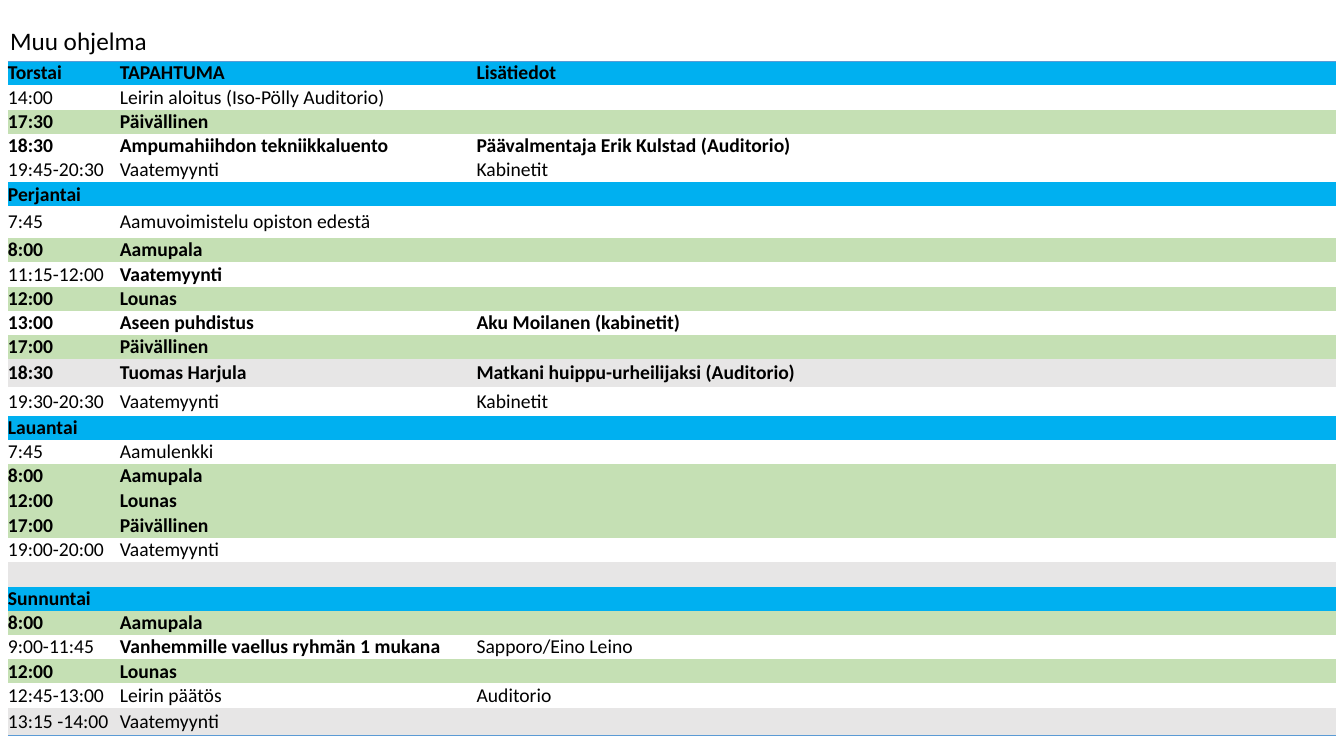
from lxml import etree
from pptx import Presentation
from pptx import util as u
from pptx.dml.color import RGBColor
from pptx.enum import text
from pptx.oxml.ns import qn

COLORS = {"ink": "000000", "day": "00B0F0", "meal": "C5E0B4", "grey": "E7E6E6", "rule": "5B9BD5"}
PLAIN_TABLE = "{2D5ABB26-0587-4C30-8999-92F81FD0307C}"
ALL_BOLD, EVENT_BOLD, NO_BOLD = (0, 1, 2), (1,), ()

# Row kind: fill colour and bold columns
ROW_STYLES = {
    "day": ("day", ALL_BOLD),
    "meal": ("meal", ALL_BOLD),
    "talk": (None, ALL_BOLD),
    "guest": ("grey", ALL_BOLD),
    "event": (None, EVENT_BOLD),
    "plain": (None, NO_BOLD),
    "shaded": ("grey", NO_BOLD),
}
COLUMN_WIDTHS = (2.82, 8.99, 21.67)
ROW_HEIGHT = 0.61
TALL_ROWS = {6: 0.8, 12: 0.71, 13: 0.71, 17: 0.65, 26: 0.71}
PROGRAMME = [
    ("day", "Torstai", "TAPAHTUMA", "Lisätiedot"),
    ("plain", "14:00", "Leirin aloitus (Iso-Pölly Auditorio)", ""),
    ("meal", "17:30", "Päivällinen", ""),
    ("talk", "18:30", "Ampumahiihdon tekniikkaluento", "Päävalmentaja Erik Kulstad (Auditorio)"),
    ("plain", "19:45-20:30", "Vaatemyynti", "Kabinetit"),
    ("day", "Perjantai", "", ""),
    ("plain", "7:45", "Aamuvoimistelu opiston edestä", ""),
    ("meal", "8:00", "Aamupala", ""),
    ("event", "11:15-12:00", "Vaatemyynti", ""),
    ("meal", "12:00", "Lounas", ""),
    ("talk", "13:00", "Aseen puhdistus", "Aku Moilanen (kabinetit)"),
    ("meal", "17:00", "Päivällinen", ""),
    ("guest", "18:30", "Tuomas Harjula", "Matkani huippu-urheilijaksi (Auditorio)"),
    ("plain", "19:30-20:30", "Vaatemyynti", "Kabinetit"),
    ("day", "Lauantai", "", ""),
    ("plain", "7:45", "Aamulenkki", ""),
    ("meal", "8:00", "Aamupala", ""),
    ("meal", "12:00", "Lounas", ""),
    ("meal", "17:00", "Päivällinen", ""),
    ("plain", "19:00-20:00", "Vaatemyynti", ""),
    ("shaded", "", "", ""),
    ("day", "Sunnuntai", "", ""),
    ("meal", "8:00", "Aamupala", ""),
    ("event", "9:00-11:45", "Vanhemmille vaellus ryhmän 1 mukana", "Sapporo/Eino Leino"),
    ("meal", "12:00", "Lounas", ""),
    ("plain", "12:45-13:00", "Leirin päätös", "Auditorio"),
    ("shaded", "13:15 -14:00", "Vaatemyynti", ""),
]


class ProgrammeSlide:
    font = "Calibri"
    title_size = 18
    cell_size = 14

    def __init__(self, deck):
        self.page = deck.slides.add_slide(deck.slide_layouts[5])

    def format_para(self, para, size, bold=False):
        para.alignment = text.PP_ALIGN.LEFT
        for span in para.runs:
            span.font.name = self.font
            span.font.size = u.Pt(size)
            span.font.bold = bold
            span.font.color.rgb = RGBColor.from_string(COLORS["ink"])

    def title(self, wording, left, top, width, height):
        box = self.page.shapes.title
        box.left, box.top, box.width, box.height = map(u.Cm, (left, top, width, height))
        frame = box.text_frame
        frame.text = wording
        frame.word_wrap = True
        frame.auto_size = text.MSO_AUTO_SIZE.SHAPE_TO_FIT_TEXT
        frame.vertical_anchor = text.MSO_ANCHOR.TOP
        frame.paragraphs[0].line_spacing = 1.0
        self.format_para(frame.paragraphs[0], self.title_size)

    def cell(self, cell, wording, fill, bold):
        cell.margin_left = cell.margin_right = cell.margin_top = cell.margin_bottom = 0
        cell.vertical_anchor = text.MSO_ANCHOR.MIDDLE
        if fill:
            cell.fill.solid()
            cell.fill.fore_color.rgb = RGBColor.from_string(COLORS[fill])
        else:
            cell.fill.background()
        para = cell.text_frame.paragraphs[0]
        para.text = wording
        self.format_para(para, self.cell_size, bold)
        if not wording:
            etree.SubElement(para._p, qn("a:endParaRPr"), sz=str(self.cell_size * 100))

    def border(self, cell, side):
        """Draw a thin rule on one side of a cell: "T" for top, "B" for bottom."""
        line = etree.Element(qn(f"a:ln{side}"), w=str(u.Pt(1)))
        fill = etree.SubElement(line, qn("a:solidFill"))
        etree.SubElement(fill, qn("a:srgbClr"), val=COLORS["rule"])
        cell._tc.get_or_add_tcPr().insert(0, line)

    def table(self, rows, left, top):
        heights = [TALL_ROWS.get(index, ROW_HEIGHT) for index in range(len(rows))]
        frame = self.page.shapes.add_table(
            len(rows), len(COLUMN_WIDTHS), u.Cm(left), u.Cm(top),
            u.Cm(sum(COLUMN_WIDTHS)), u.Cm(sum(heights)))
        table = frame.table
        table.first_row = table.horz_banding = False
        table._tbl.tblPr.find(qn("a:tableStyleId")).text = PLAIN_TABLE
        for column, width in zip(table.columns, COLUMN_WIDTHS):
            column.width = u.Cm(width)
        for row, height, (kind, *wordings) in zip(table.rows, heights, rows):
            row.height = u.Cm(height)
            fill, bold_columns = ROW_STYLES[kind]
            for index, wording in enumerate(wordings):
                self.cell(row.cells[index], wording, fill, index in bold_columns)
        for index in range(len(COLUMN_WIDTHS)):
            self.border(table.cell(0, index), "T")
            self.border(table.cell(len(rows) - 1, index), "B")


def main():
    deck = Presentation()
    deck.slide_width, deck.slide_height = u.Cm(33.87), u.Cm(19.05)
    slide = ProgrammeSlide(deck)
    slide.title("Muu ohjelma", 0, 0.5, 7.98, 1.03)
    slide.table(PROGRAMME, 0.2, 1.54)
    deck.save("out.pptx")


if __name__ == "__main__":
    main()
